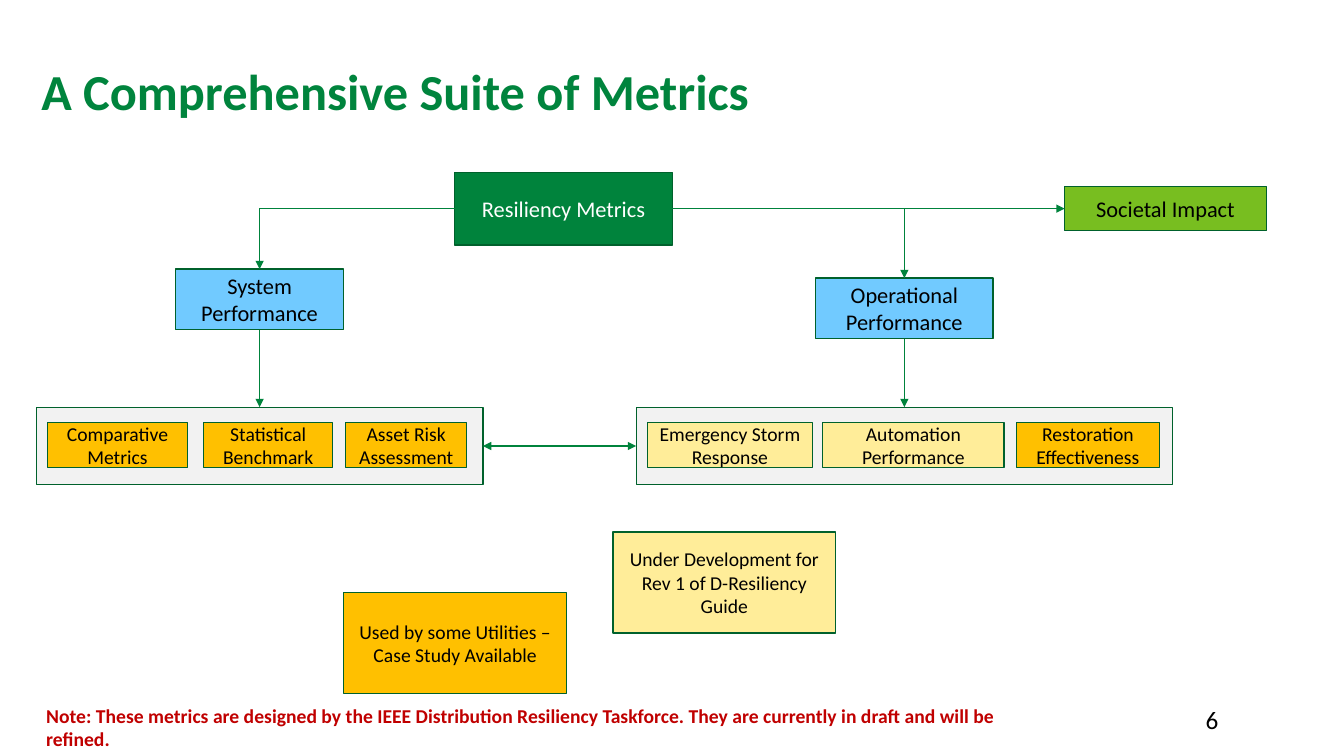
from lxml import etree
from pptx import Presentation
from pptx import util as u
from pptx.dml.color import RGBColor
from pptx.enum import shapes, text
from pptx.oxml.ns import qn

GREEN, DARK_GREEN, LIME = "00833C", "00612C", "78BE20"
BLUE, ORANGE, YELLOW, GRAY = "71CAFF", "FFC000", "FFED99", "F2F2F2"
BLACK, WHITE, RED = "000000", "FFFFFF", "C00000"
TOP, LEFT, BOTTOM, RIGHT = range(4)  # connection sites of a rectangle


def color(hex_value):
    return RGBColor.from_string(hex_value)


class Diagram:
    """Holds the style and the current slide."""

    font_name = "Calibri"

    def __init__(self, slide):
        self.slide = slide

    def set_text(self, shape, words, size, hex_value, bold=False):
        paragraph = shape.text_frame.paragraphs[0]
        paragraph.text = words
        font = paragraph.font
        font.name, font.size, font.bold = self.font_name, u.Pt(size), bold
        font.color.rgb = color(hex_value)
        return paragraph

    def title(self, words, left, top, width, height):
        shape = self.slide.shapes.title
        shape.left, shape.top = u.Inches(left), u.Inches(top)
        shape.width, shape.height = u.Inches(width), u.Inches(height)
        shape.text_frame.vertical_anchor = text.MSO_ANCHOR.MIDDLE
        paragraph = self.set_text(shape, words, 36, "00843D", bold=True)
        paragraph.alignment = text.PP_ALIGN.LEFT

    def label(self, words, left, top, width, height, size, hex_value, bold=False, wrap=True):
        shape = self.slide.shapes.add_textbox(*map(u.Inches, (left, top, width, height)))
        shape.text_frame.word_wrap = wrap
        self.set_text(shape, words, size, hex_value, bold)

    def box(self, words, left, top, width, height, fill, size=14, text_color=BLACK):
        shape = self.slide.shapes.add_shape(
            shapes.MSO_SHAPE.RECTANGLE, *map(u.Inches, (left, top, width, height)))
        shape.shadow.inherit = False
        shape.fill.solid()
        shape.fill.fore_color.rgb = color(fill)
        shape.line.color.rgb = color(DARK_GREEN)
        shape.line.width = u.Pt(1)
        if words:
            shape.text_frame.word_wrap = True
            shape.text_frame.vertical_anchor = text.MSO_ANCHOR.MIDDLE
            paragraph = self.set_text(shape, words, size, text_color)
            paragraph.alignment = text.PP_ALIGN.CENTER
        return shape

    def arrow(self, start, start_site, end, end_site, width=0.5, bent=False, both_ends=False):
        kind = shapes.MSO_CONNECTOR.ELBOW if bent else shapes.MSO_CONNECTOR.STRAIGHT
        connector = self.slide.shapes.add_connector(kind, 0, 0, 0, 0)
        connector.begin_connect(start, start_site)
        connector.end_connect(end, end_site)
        connector.line.color.rgb = color(GREEN)
        connector.line.width = u.Pt(width)
        properties = connector._element.spPr
        if bent:  # a single right-angle turn
            properties.find(qn("a:prstGeom")).set("prst", "bentConnector2")
        line = properties.find(qn("a:ln"))
        for tag in ["a:headEnd", "a:tailEnd"] if both_ends else ["a:tailEnd"]:
            etree.SubElement(line, qn(tag)).set("type", "triangle")
        etree.SubElement(properties, qn("a:effectLst"))


def main():
    presentation = Presentation()
    presentation.slide_width = u.Inches(13.33)
    presentation.slide_height = u.Inches(7.5)
    diagram = Diagram(presentation.slides.add_slide(presentation.slide_layouts[5]))

    # Title and slide number
    diagram.title("A Comprehensive Suite of Metrics", 0.31, 0.51, 10.44, 0.77)
    diagram.label("6", 11.86, 6.94, 0.5, 0.25, 18, BLACK)

    # Top levels of the tree
    resiliency = diagram.box("Resiliency Metrics", 4.51, 1.71, 2.16, 0.72, GREEN, 16, WHITE)
    societal = diagram.box("Societal Impact", 10.56, 1.85, 2, 0.44, LIME, 16)
    system = diagram.box("System Performance", 1.74, 2.67, 1.67, 0.6, BLUE, 16)
    operational = diagram.box("Operational Performance", 8.09, 2.76, 1.76, 0.6, BLUE, 16)

    # Metric groups
    system_group = diagram.box("", 0.36, 4.04, 4.43, 0.77, GRAY)
    operational_group = diagram.box("", 6.31, 4.04, 5.32, 0.77, GRAY)
    for words, left, width, fill in [
        ("Comparative Metrics", 0.47, 1.39, ORANGE),
        ("Statistical Benchmark", 2.02, 1.28, ORANGE),
        ("Asset Risk Assessment", 3.43, 1.2, ORANGE),
        ("Emergency Storm Response", 6.42, 1.64, YELLOW),
        ("Automation Performance", 8.16, 1.8, YELLOW),
        ("Restoration Effectiveness", 10.08, 1.42, ORANGE),
    ]:
        diagram.box(words, left, 4.19, width, 0.45, fill)

    # Arrows
    diagram.arrow(system, BOTTOM, system_group, TOP)
    diagram.arrow(operational, BOTTOM, operational_group, TOP)
    diagram.arrow(resiliency, LEFT, system, TOP, bent=True)
    diagram.arrow(resiliency, RIGHT, operational, TOP, bent=True)
    diagram.arrow(resiliency, RIGHT, societal, LEFT)
    diagram.arrow(system_group, RIGHT, operational_group, LEFT, width=1, both_ends=True)

    # Legend and note
    diagram.box("Used by some Utilities – Case Study Available", 3.41, 5.88, 2.21, 1, ORANGE)
    diagram.box("Under Development for Rev 1 of D-Resiliency Guide", 6.08, 5.28, 2.21, 1, YELLOW)
    diagram.label(
        "Note: These metrics are designed by the IEEE Distribution Resiliency Taskforce. "
        "They are currently in draft and will be refined.",
        0.36, 6.93, 10.2, 0.31, 14, RED, bold=True, wrap=False)

    presentation.save("out.pptx")


if __name__ == "__main__":
    main()
